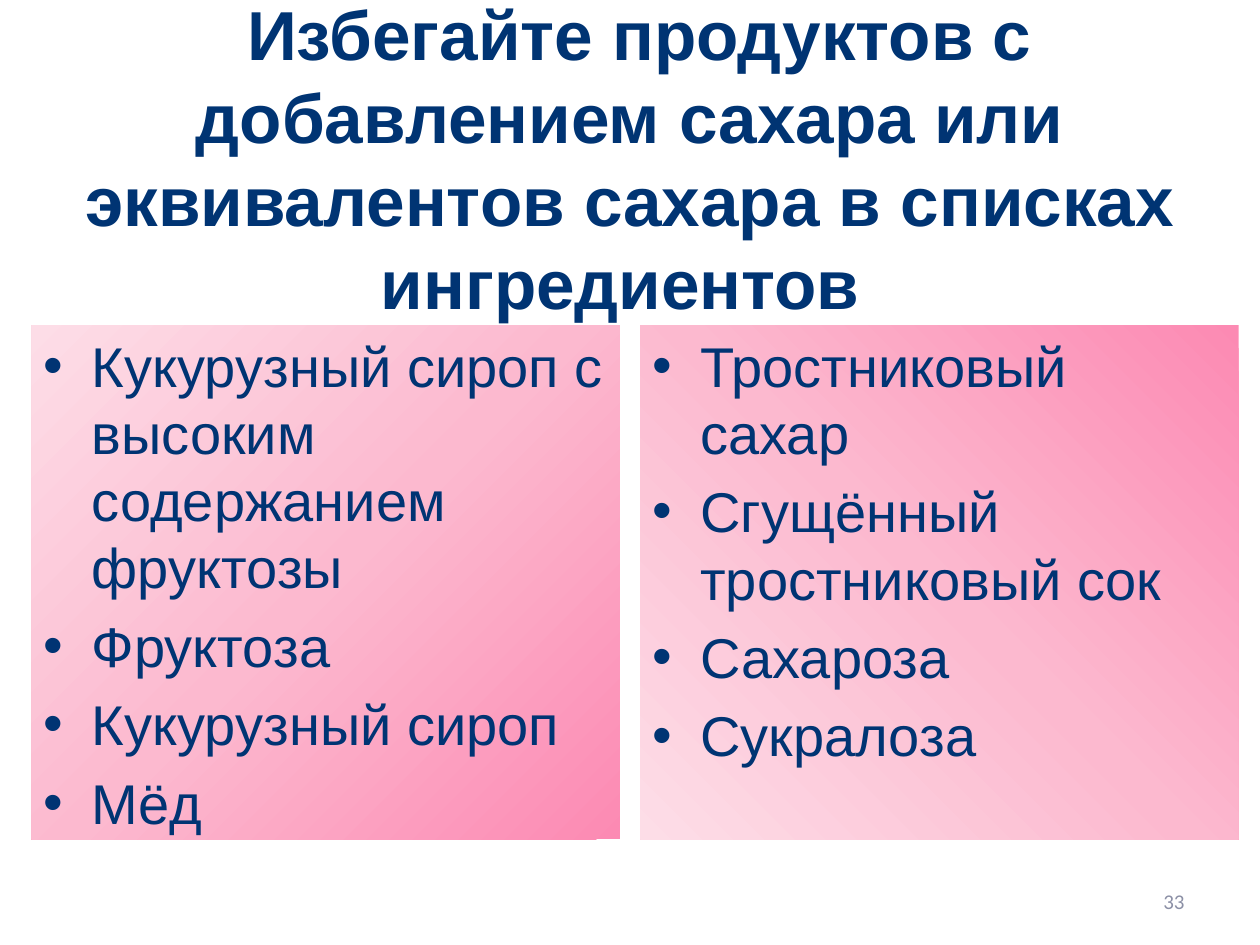
import pptx
import pptx.dml.color
import pptx.enum.shapes
import pptx.enum.text
import pptx.oxml
import pptx.oxml.ns
import pptx.util

Inches, Pt = pptx.util.Inches, pptx.util.Pt
RGBColor = pptx.dml.color.RGBColor
ALIGN = pptx.enum.text.PP_ALIGN
ANCHOR = pptx.enum.text.MSO_ANCHOR
NS = pptx.oxml.ns.nsdecls("a")

NAVY = RGBColor(0x00, 0x34, 0x73)
GREY = RGBColor(0x8C, 0x90, 0xA6)
PINKS = {0: RGBColor(0xFC, 0x8A, 0xB3),
         50: RGBColor(0xFC, 0xB9, 0xCF),
         100: RGBColor(0xFD, 0xDD, 0xE7)}

TITLE = (" Избегайте продуктов с добавлением сахара или эквивалентов "
         "сахара в списках ингредиентов ")
LEFT_ITEMS = ["Кукурузный сироп с высоким содержанием фруктозы", "Фруктоза",
              "Кукурузный сироп", "Мёд"]
RIGHT_ITEMS = ["Тростниковый сахар", "Сгущённый тростниковый сок",
               "Сахароза", "Сукралоза"]


def write(p, text, size, font="Arial", color=NAVY, bold=False,
          align=ALIGN.LEFT):
    p.alignment = align
    r = p.add_run()
    r.text = text
    r.font.size, r.font.name, r.font.bold = Pt(size), font, bold
    r.font.color.rgb = color


def add_bullet(p, indent):
    pPr = p._p.get_or_add_pPr()
    pPr.set("marL", str(indent))
    pPr.set("indent", str(-indent))
    for xml in (f'<a:buFont {NS} typeface="Arial"/>',
                f'<a:buChar {NS} char="•"/>'):
        pPr.append(pptx.oxml.parse_xml(xml))


def fill_gradient(sp, angle):
    """Fill with the pink stops; angle is in degrees, clockwise."""
    stops = "".join(f'<a:gs pos="{pos * 1000}"><a:srgbClr val="{color}"/></a:gs>'
                    for pos, color in PINKS.items())
    sp._element.spPr.find(pptx.oxml.ns.qn("a:prstGeom")).addnext(
        pptx.oxml.parse_xml(
            f'<a:gradFill {NS} rotWithShape="1"><a:gsLst>{stops}</a:gsLst>'
            f'<a:lin ang="{angle * 60000}" scaled="0"/></a:gradFill>'))


class SlideBuilder:
    def __init__(self, prs):
        self.slide = prs.slides.add_slide(prs.slide_layouts[5])

    def title(self, text, x, y, w, h):
        sp = self.slide.shapes.title
        sp.left, sp.top, sp.width, sp.height = map(Inches, (x, y, w, h))
        tf = sp.text_frame
        tf.auto_size = pptx.enum.text.MSO_AUTO_SIZE.NONE
        tf.vertical_anchor = ANCHOR.MIDDLE
        write(tf.paragraphs[0], text, 39.6, bold=True, align=ALIGN.CENTER)

    def panel(self, items, x, y, w, h, angle):
        sp = self.slide.shapes.add_shape(
            pptx.enum.shapes.MSO_SHAPE.RECTANGLE, *map(Inches, (x, y, w, h)))
        sp.shadow.inherit = False
        sp.line.fill.background()
        fill_gradient(sp, angle)
        tf = sp.text_frame
        tf.word_wrap = True
        tf.vertical_anchor = ANCHOR.TOP
        for i, item in enumerate(items):
            p = tf.add_paragraph() if i else tf.paragraphs[0]
            add_bullet(p, Inches(0.38))
            if i:
                p.space_before = Pt(6.4)
            write(p, item, 32)

    def page_number(self, text, x, y, w, h):
        sp = self.slide.shapes.add_textbox(*map(Inches, (x, y, w, h)))
        tf = sp.text_frame
        tf.word_wrap = True
        tf.vertical_anchor = ANCHOR.MIDDLE
        write(tf.paragraphs[0], text, 12, "Calibri", GREY, align=ALIGN.RIGHT)


def main():
    prs = pptx.Presentation()
    prs.slide_width, prs.slide_height = Inches(10), Inches(7.5)
    s = SlideBuilder(prs)
    s.title(TITLE, 0, 0, 10, 2.5)
    s.panel(LEFT_ITEMS, 0.25, 2.58, 4.67, 4.08, angle=225)
    s.panel(RIGHT_ITEMS, 5.08, 2.58, 4.75, 4.08, angle=135)
    s.page_number("33", 7.17, 6.95, 2.33, 0.4)
    prs.save("out.pptx")


if __name__ == "__main__":
    main()
